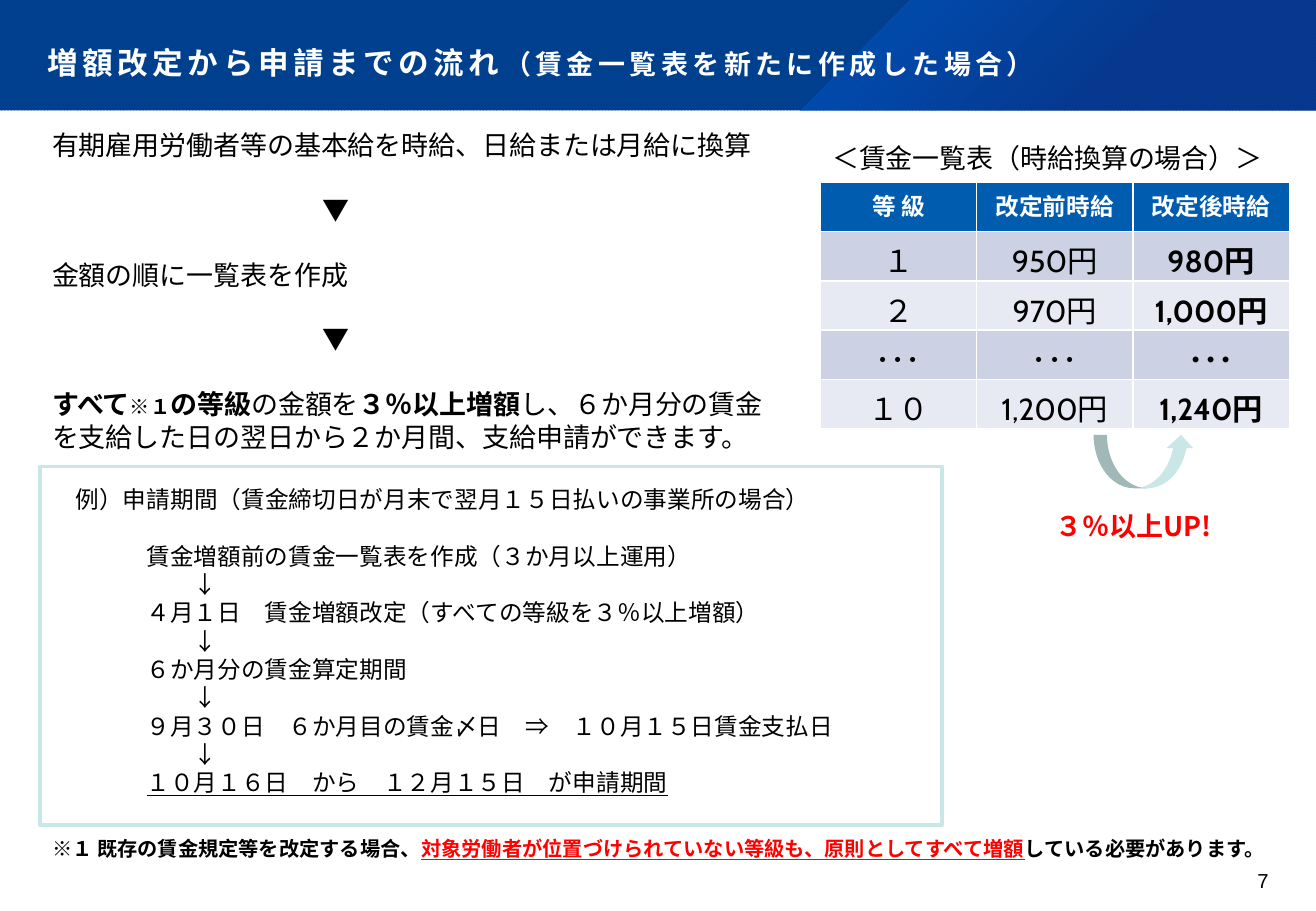
from lxml.etree import SubElement
from pptx import Presentation
from pptx.dml.color import RGBColor
from pptx.enum.dml import MSO_PATTERN
from pptx.enum.shapes import MSO_SHAPE as SHAPE
from pptx.enum.text import MSO_ANCHOR as ANCHOR, PP_ALIGN as ALIGN
from pptx.oxml import parse_xml
from pptx.oxml.ns import nsdecls, qn
from pptx.util import Inches, Pt

JP, LATIN = "Noto Sans CJK JP", "Cabin"
WHITE, BLACK, RED, MINT = "FFFFFF", "000000", "FF0000", "C9E7E7"
HEADER, BAND, PALE = "005CAF", "CCD2E3", "E7EAF2"

STEPS = [
    (["有期雇用労働者等の基本給を時給、日給または月給に換算"], 16, 0, 0),
    (["▼"], 16, 10, 1),
    (["金額の順に一覧表を作成"], 16, 0, 1),
    (["▼"], 16, 10, 1),
    ([("すべて", {"bold": True}), ("※１", {"bold": True, "size": 12}),
      ("の等級", {"bold": True}), "の金額を",
      ("３％以上増額", {"bold": True}), "し、６か月分の賃金"], 16, 0, 1),
    (["を支給した日の翌日から２か月間、支給申請ができます。"], 16, 0, 0),
    (["例）申請期間（賃金締切日が月末で翌月１５日払いの事業所の場合）"], 14, 1, 1.14),
]
EXAMPLE = [
    "賃金増額前の賃金一覧表を作成（３か月以上運用）",
    "４月１日　賃金増額改定（すべての等級を３％以上増額）",
    "６か月分の賃金算定期間",
    "９月３０日　６か月目の賃金〆日　⇒　１０月１５日賃金支払日",
    ("１０月１６日　から　１２月１５日　が申請期間", {"underline": True}),
]
for i, line in enumerate(EXAMPLE):
    if i:
        STEPS.append((["↓"], 14, 6, 0))
    STEPS.append(([line], 14, 4, 0 if i else 1))

WAGES = [
    ("等 級", "改定前時給", "改定後時給"),
    ("１", "950円", "980円"),
    ("２", "970円", "1,000円"),
    ("･･･", "･･･", "･･･"),
    ("１０", "1,200円", "1,240円"),
]


def rgb(value):
    return RGBColor.from_string(value)


class SlideBuilder:
    """Draws styled elements on the current slide."""

    def __init__(self, prs):
        self.s = prs.slides.add_slide(prs.slide_layouts[5])

    def font(self, font, size=None, color=None, bold=None, underline=None, name=None):
        if size:
            font.size = Pt(size)
        if color:
            font.color.rgb = rgb(color)
        if bold is not None:
            font.bold = bold
        if underline:
            font.underline = True
        if name:
            font.name = name
            east_asian = JP if name == LATIN else name
            SubElement(font._rPr, qn("a:ea")).set("typeface", east_asian)

    def text(self, p, runs, size, color=BLACK, bold=False, name=JP, align=ALIGN.LEFT):
        p.alignment = align
        self.font(p.font, size, color, bold, name=name)
        for run in runs:
            text, style = (run, {}) if isinstance(run, str) else run
            r = p.add_run()
            r.text = text
            self.font(r.font, **style)

    def frame(self, tf, insets, anchor):
        tf.word_wrap = True
        tf.vertical_anchor = anchor
        tf.margin_left, tf.margin_top, tf.margin_right, tf.margin_bottom = map(Inches, insets)

    def box(self, at, insets=(0.1, 0.05, 0.1, 0.05), anchor=ANCHOR.MIDDLE):
        tf = self.s.shapes.add_textbox(*map(Inches, at)).text_frame
        self.frame(tf, insets, anchor)
        return tf

    def label(self, at, runs, size, **style):
        self.text(self.box(at).paragraphs[0], runs, size, **style)

    def title(self, at, runs, size):
        sp = self.s.shapes.title
        sp.element.getparent().append(sp.element)
        sp.left, sp.top, sp.width, sp.height = map(Inches, at)
        self.frame(sp.text_frame, (0.39, 0.36, 0.36, 0.14), ANCHOR.BOTTOM)
        p = sp.text_frame.paragraphs[0]
        self.text(p, runs, size, WHITE, True, LATIN)
        p.line_spacing = 0.9
        for r in p.runs:
            r._r.get_or_add_rPr().set("spc", "270")

    def steps(self, at, steps):
        tf = self.box(at, (0.1, 0.06, 0.1, 0), ANCHOR.TOP)
        for i, (runs, size, indent, gap) in enumerate(steps):
            p = tf.add_paragraph() if i else tf.paragraphs[0]
            self.text(p, runs, size)
            p.line_spacing = Pt(size * 1.2)
            p.space_before = Pt(size * 1.2 * gap)
            pPr = p._p.get_or_add_pPr()
            pPr.set("marL", str(Pt(size * indent)))
            pPr.set("indent", "0")

    def shape(self, kind, at, fill=None, line=None):
        sp = self.s.shapes.add_shape(kind, *map(Inches, at))
        sp.shadow.inherit = False
        if fill:
            sp.fill.solid()
            sp.fill.fore_color.rgb = rgb(fill)
        else:
            sp.fill.background()
        if line:
            sp.line.color.rgb = rgb(line)
            sp.line.width = Pt(2.25)
        else:
            sp.line.fill.background()
        return sp

    def banner(self, width, height):
        sp = self.shape(SHAPE.RECTANGLE, (0, 0, width, height))
        sp.fill.patterned()
        sp.fill.pattern = MSO_PATTERN.DARK_UPWARD_DIAGONAL
        sp.fill.fore_color.rgb = rgb("003579")
        sp.fill.back_color.rgb = rgb("004292")
        outline = self.s.shapes.build_freeform(Inches(7.49), 0)
        corners = [(width, 0), (width, height), (6.58, height)]
        outline.add_line_segments([(Inches(x), Inches(y)) for x, y in corners])
        sp = outline.convert_to_shape()
        sp.shadow.inherit = False
        sp.line.fill.background()
        stops = "".join(
            f'<a:gs pos="{pos}000"><a:srgbClr val="{color}">'
            f'<a:alpha val="{alpha}000"/></a:srgbClr></a:gs>'
            for pos, color, alpha in [(0, "0064DF", 50), (62, "0C338E", 55)])
        sp.element.spPr.find(qn("a:custGeom")).addnext(parse_xml(
            f'<a:gradFill {nsdecls("a")}><a:gsLst>{stops}</a:gsLst><a:path path="circle">'
            '<a:fillToRect r="100000" b="100000"/></a:path></a:gradFill>'))

    def table(self, at, rows):
        size = len(rows), len(rows[0])
        table = self.s.shapes.add_table(*size, *map(Inches, at)).table
        for i, row in enumerate(rows):
            for j, text in enumerate(row):
                cell = table.cell(i, j)
                cell.fill.solid()
                cell.fill.fore_color.rgb = rgb((BAND if i % 2 else PALE) if i else HEADER)
                self.text(cell.text_frame.paragraphs[0], [text], 18 if i else 14,
                          BLACK if i else WHITE, i == 0 or j == 2, LATIN, ALIGN.CENTER)


def main():
    prs = Presentation()
    prs.slide_width, prs.slide_height = Inches(10.83), Inches(7.5)
    b = SlideBuilder(prs)
    b.banner(10.83, 0.91)
    b.title((0, 0.17, 10.83, 0.64), ["増額改定から申請までの流れ",
            ("（賃金一覧表を新たに作成した場合）", {"size": 16})], 18.1)
    page = b.box((9.75, 7.15, 0.69, 0.3), (0, 0, 0, 0), ANCHOR.TOP)
    b.text(page.paragraphs[0], ["7"], 12, name="Arial", align=ALIGN.RIGHT)
    b.steps((0.33, 1, 9.92, 5.86), STEPS)
    b.table((6.75, 1.5, 3.86, 2.03), WAGES)
    b.shape(SHAPE.CURVED_UP_ARROW, (9, 3.58, 0.83, 0.44), fill=MINT)
    b.label((6.75, 1.05, 3.92, 0.5), ["＜賃金一覧表（時給換算の場合）＞"], 16)
    b.label((8.59, 4.08, 1.66, 0.5), ["３％以上UP!"], 16, color=RED, bold=True)
    b.label((0.33, 6.8, 10.28, 0.37), [
        "※１ 既存の賃金規定等を改定する場合、",
        ("対象労働者が位置づけられていない等級も、原則としてすべて増額",
         {"color": RED, "underline": True}),
        "している必要があります。"], 12, bold=True)
    b.shape(SHAPE.RECTANGLE, (0.33, 3.84, 7.42, 2.95), line=MINT)
    prs.save("out.pptx")


if __name__ == "__main__":
    main()
